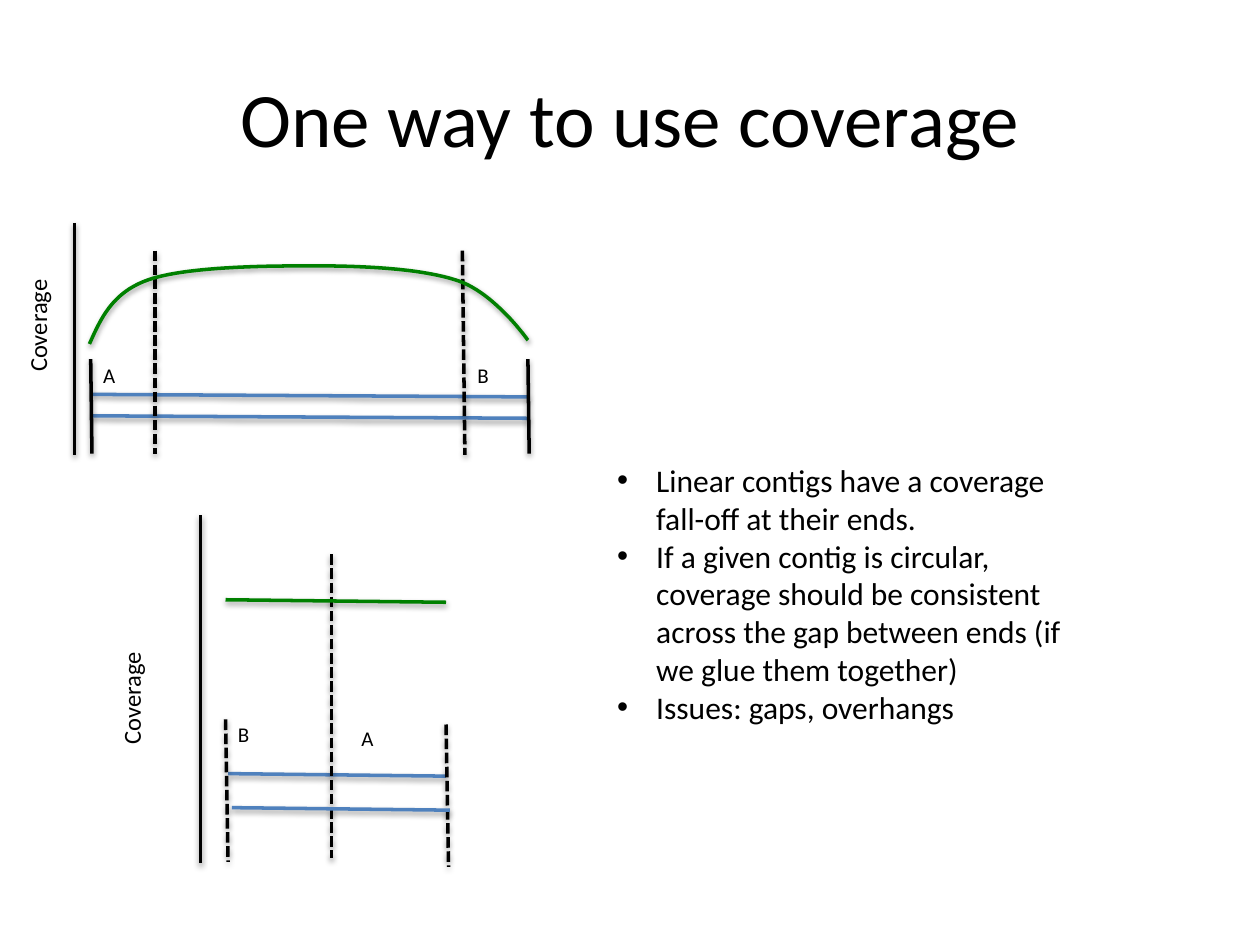
from dataclasses import dataclass

from lxml import etree
from pptx import Presentation
from pptx import util as u
from pptx.dml.color import RGBColor
from pptx.enum import dml, shapes, text
from pptx.oxml import parse_xml
from pptx.oxml.ns import qn

EMU_PER_PX = 9144  # 100 px to the inch
FONT = "Calibri"
BLACK, BLUE, GREEN = "000000", "4F81BD", "008000"
CURVE_STEPS = 24
Point = tuple[int, int]

SHADOW_XML = (
    '<a:effectLst xmlns:a="http://schemas.openxmlformats.org/drawingml/2006/main">'
    '<a:outerShdw blurRad="40000" dist="20000" dir="5400000" rotWithShape="0">'
    '<a:srgbClr val="000000"><a:alpha val="38000"/></a:srgbClr>'
    "</a:outerShdw></a:effectLst>"
)


@dataclass(frozen=True)
class Stroke:
    start: Point
    end: Point
    color: str = BLACK
    dashed: bool = False


@dataclass(frozen=True)
class Label:
    words: str
    left: int
    top: int
    width: int
    height: int
    size: int = 12
    rotation: int = 0


LINEAR_STROKES = [
    Stroke((73, 313), (420, 315), BLUE),
    Stroke((73, 330), (420, 332), BLUE),
    Stroke((72, 285), (73, 360)),
    Stroke((419, 285), (420, 360)),
    Stroke((123, 199), (123, 360), dashed=True),
    Stroke((367, 199), (369, 361), dashed=True),
    Stroke((59, 177), (59, 361)),
]
LINEAR_LABELS = [
    Label("A", 72, 283, 50, 30),
    Label("B", 369, 283, 50, 30),
    Label("Coverage", -34, 224, 128, 34, 14, 270),
]
# Start point, then two control points and an end point for each segment
COVERAGE_CURVE = [
    (71, 273),
    (80, 253), (89, 232), (118, 222),
    (147, 212), (206, 211), (247, 211),
    (288, 211), (335, 213), (364, 223),
    (393, 233), (419, 270), (419, 270),
]

CIRCULAR_STROKES = [
    Stroke((181, 614), (354, 616), BLUE),
    Stroke((179, 571), (181, 684), dashed=True),
    Stroke((354, 575), (356, 688), dashed=True),
    Stroke((159, 409), (159, 685)),
    Stroke((263, 440), (263, 681), dashed=True),
    Stroke((184, 641), (357, 643), BLUE),
    Stroke((179, 476), (354, 478), GREEN),
]
CIRCULAR_LABELS = [
    Label("B", 179, 568, 79, 45),
    Label("A", 277, 571, 79, 45),
    Label("Coverage", 18, 478, 192, 53, 14, 270),
]

POINTS = [
    "Linear contigs have a coverage fall-off at their ends.",
    "If a given contig is circular, coverage should be consistent across "
    "the gap between ends (if we glue them together)",
    "Issues: gaps, overhangs",
]


def px(length: float) -> u.Emu:
    return u.Emu(round(length * EMU_PER_PX))


def rgb(color: str) -> RGBColor:
    return RGBColor.from_string(color)


def style_line(shape, color: str, dashed: bool = False) -> None:
    """Set the line of a shape and give it the soft shadow all lines share."""
    shape.line.color.rgb = rgb(color)
    shape.line.width = u.Pt(2)
    if dashed:
        shape.line.dash_style = dml.MSO_LINE.SQUARE_DOT
    properties = shape._element.spPr
    for effects in properties.findall(qn("a:effectLst")):
        properties.remove(effects)
    properties.append(parse_xml(SHADOW_XML))


def draw_stroke(group, stroke: Stroke) -> None:
    ends = [px(value) for value in stroke.start + stroke.end]
    connector = group.shapes.add_connector(shapes.MSO_CONNECTOR.STRAIGHT, *ends)
    style_line(connector, stroke.color, stroke.dashed)


def add_run(paragraph, words: str, size: int) -> None:
    run = paragraph.add_run()
    run.text = words
    run.font.name = FONT
    run.font.size = u.Pt(size)
    run.font.color.rgb = rgb(BLACK)


def add_text_box(parent, left: int, top: int, width: int, height: int):
    box = parent.shapes.add_textbox(px(left), px(top), px(width), px(height))
    box.text_frame.word_wrap = True
    box.text_frame.auto_size = text.MSO_AUTO_SIZE.SHAPE_TO_FIT_TEXT
    return box


def draw_label(group, label: Label) -> None:
    box = add_text_box(group, label.left, label.top, label.width, label.height)
    box.rotation = label.rotation
    add_run(box.text_frame.paragraphs[0], label.words, label.size)


def bezier_point(corners: list[Point], t: float) -> tuple[float, float]:
    weights = ((1 - t) ** 3, 3 * t * (1 - t) ** 2, 3 * t**2 * (1 - t), t**3)
    x, y = (sum(w * c for w, c in zip(weights, axis)) for axis in zip(*corners))
    return x, y


def draw_curve(group, points: list[Point], color: str) -> None:
    builder = group.shapes.build_freeform(*map(px, points[0]))
    vertices = [
        tuple(map(px, bezier_point(points[first:first + 4], step / CURVE_STEPS)))
        for first in range(0, len(points) - 1, 3)
        for step in range(1, CURVE_STEPS + 1)
    ]
    builder.add_line_segments(vertices, close=False)
    curve = builder.convert_to_shape()
    curve.fill.background()
    style_line(curve, color)


def draw_diagram(slide, strokes: list[Stroke], labels: list[Label]):
    group = slide.shapes.add_group_shape()
    for stroke in strokes:
        draw_stroke(group, stroke)
    for label in labels:
        draw_label(group, label)
    return group


def add_bullet(paragraph, indent: int) -> None:
    properties = paragraph._p.get_or_add_pPr()
    properties.set("marL", str(px(indent)))
    properties.set("indent", str(px(-indent)))
    etree.SubElement(properties, qn("a:buFont"), typeface="Arial")
    etree.SubElement(properties, qn("a:buChar"), char="•")


def draw_points(slide, points: list[str]) -> None:
    frame = add_text_box(slide, 480, 361, 379, 222).text_frame
    for number, words in enumerate(points):
        paragraph = frame.add_paragraph() if number else frame.paragraphs[0]
        add_bullet(paragraph, 31)
        add_run(paragraph, words, 18)


def set_title(slide, words: str) -> None:
    title = slide.shapes.title
    title.left, title.top, title.width, title.height = map(px, (50, 30, 900, 125))
    title.text_frame.vertical_anchor = text.MSO_ANCHOR.MIDDLE
    paragraph = title.text_frame.paragraphs[0]
    paragraph.alignment = text.PP_ALIGN.CENTER
    add_run(paragraph, words, 44)


def main() -> None:
    presentation = Presentation()
    presentation.slide_width, presentation.slide_height = px(1000), px(750)
    slide = presentation.slides.add_slide(presentation.slide_layouts[5])
    set_title(slide, "One way to use coverage")
    linear = draw_diagram(slide, LINEAR_STROKES, LINEAR_LABELS)
    draw_curve(linear, COVERAGE_CURVE, GREEN)
    draw_points(slide, POINTS)
    draw_diagram(slide, CIRCULAR_STROKES, CIRCULAR_LABELS)
    presentation.save("out.pptx")


if __name__ == "__main__":
    main()
